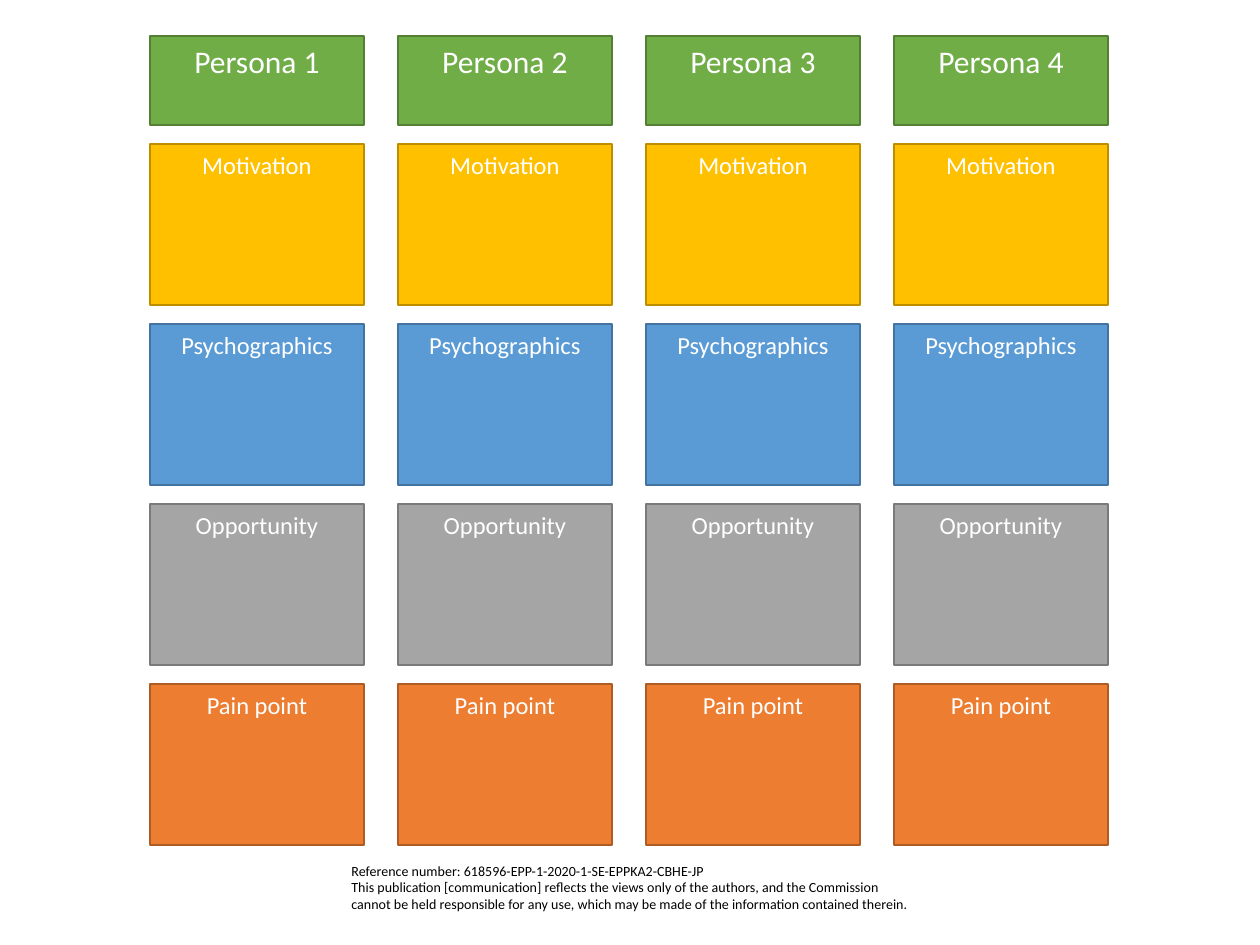
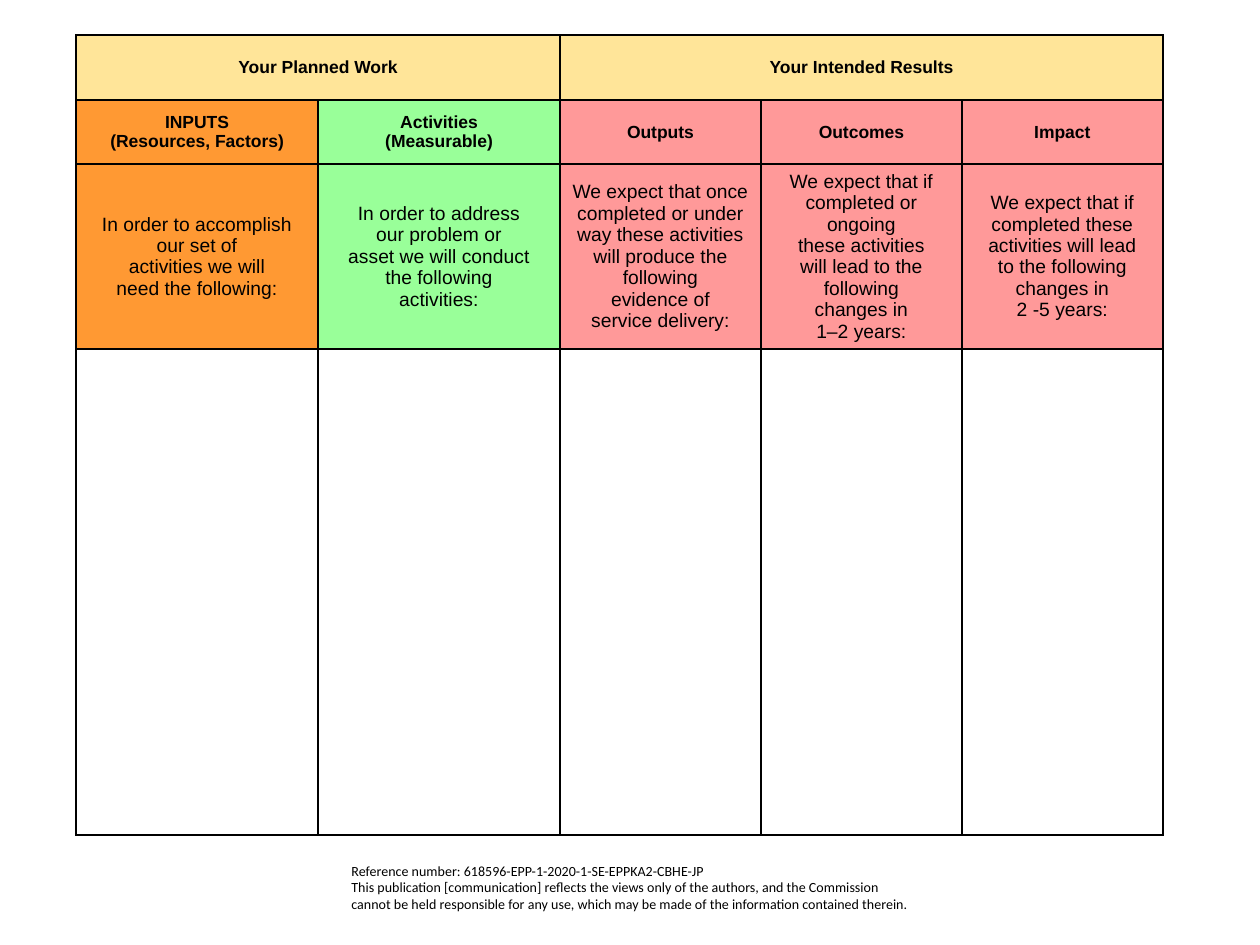
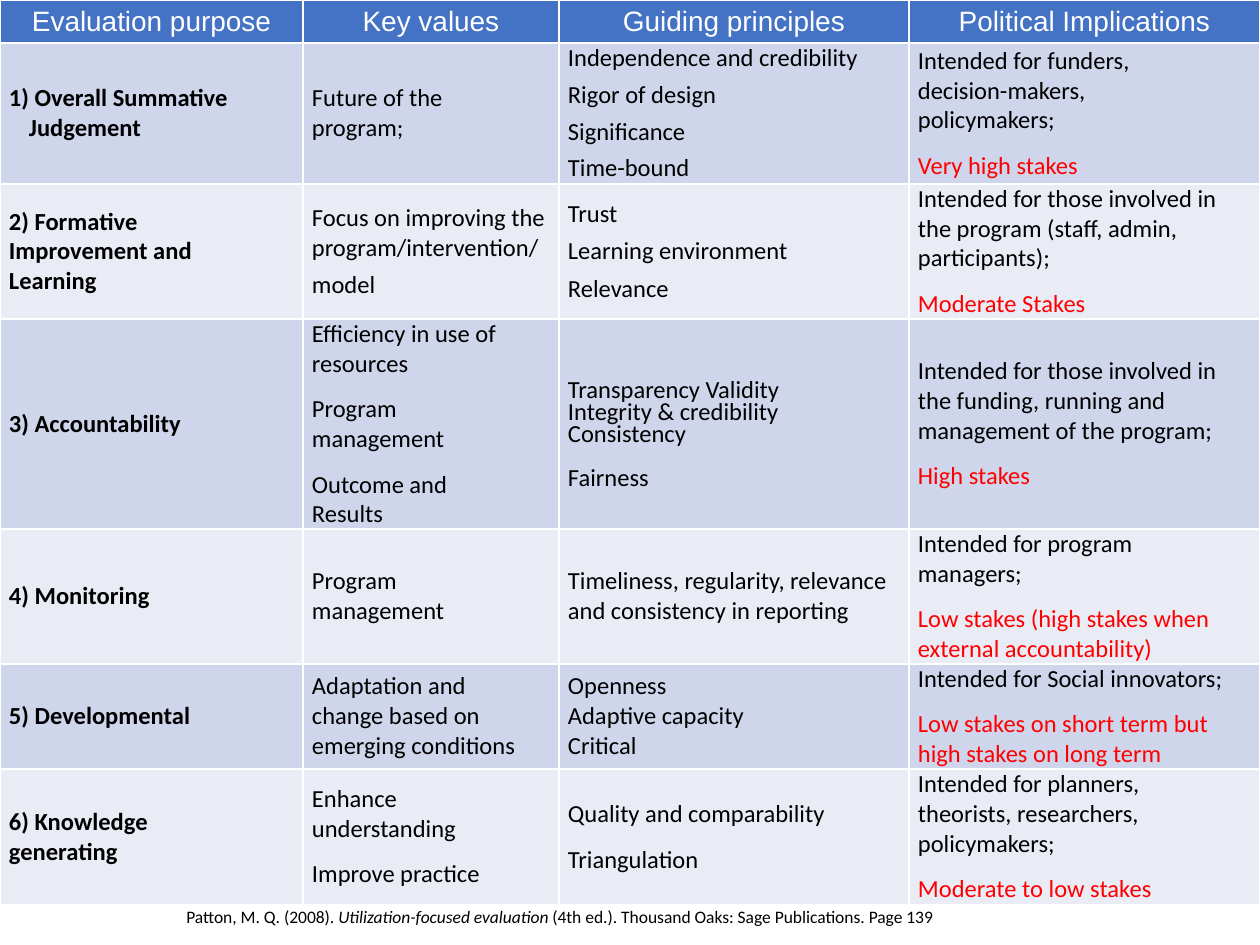
from dataclasses import dataclass

from pptx import Presentation
from pptx.dml.color import RGBColor
from pptx.enum.shapes import MSO_SHAPE as Shape
from pptx.enum.text import MSO_ANCHOR as Anchor, PP_ALIGN as Align
from pptx.oxml import parse_xml
from pptx.oxml.ns import nsdecls
from pptx.util import Emu, Pt

PX_PER_INCH = 126


@dataclass(frozen=True)
class Theme:
    body: str = "Calibri"
    grid: str = "Arial"
    black: str = "000000"
    white: str = "FFFFFF"
    stakes: str = "FF0000"
    header: str = "4472C4"
    bands: tuple = ("CFD5EA", "E9EBF5")
    group: str = "FFE599"
    inputs: str = "FF9933"
    activities: str = "99FF99"
    results: str = "FF9999"
    footer_size: int = 8
    source_size: int = 10
    heading_size: int = 10
    prompt_size: int = 11
    card_size: int = 14
    column_size: int = 16
    persona_size: int = 18


THEME = Theme()

FOOTER = (
    "Reference number: 618596-EPP-1-2020-1-SE-EPPKA2-CBHE-JP\n"
    "This publication [communication] reflects the views only of the authors, and the "
    "Commission cannot be held responsible for any use, which may be made of the "
    "information contained therein."
)
SOURCE = (
    "Patton, M. Q. (2008). *Utilization-focused evaluation* (4th ed.). "
    "Thousand Oaks: Sage Publications. Page 139"
)

# label, fill, outline
PERSONA_CARDS = [
    ("Motivation", "FFC000", "BD8E00"),
    ("Psychographics", "5B9BD5", "43739E"),
    ("Opportunity", "A5A5A5", "7A7A7A"),
    ("Pain point", "ED7D31", "AF5C24"),
]

# heading lines, prompt lines, fill
LOGIC_COLUMNS = [
    (["INPUTS", "(Resources, Factors)"],
     ["In order to accomplish", "our set of", "activities we will", "need the following:"],
     THEME.inputs),
    (["Activities", "(Measurable)"],
     ["In order to address", "our problem or", "asset we will conduct", "the following",
      "activities:"],
     THEME.activities),
    (["Outputs"],
     ["We expect that once", "completed or under", "way these activities",
      "will produce the following", "evidence of", "service delivery:"],
     THEME.results),
    (["Outcomes"],
     ["We expect that if", "completed or ongoing", "these activities",
      "will lead to the following", "changes in", "1–2 years:"],
     THEME.results),
    (["Impact"],
     ["We expect that if", "completed these", "activities will lead", "to the following",
      "changes in", "2 -5 years:"],
     THEME.results),
]


def spaced(text, before=9, line=None):
    return text, dict(before=before, line=line)


def stakes(text):
    return text, dict(before=9, color=THEME.stakes)


PURPOSE_HEADINGS = ["Evaluation purpose", "Key values", "Guiding principles",
                    "Political Implications"]
PURPOSES = [
    [[("1) Overall Summative Judgement", dict(hang=20))],
     ["Future of the program;"],
     ["Independence and credibility"]
     + [spaced(text, 9.2, Pt(11.8)) for text in ("Rigor of design", "Significance", "Time-bound")],
     ["Intended for funders, decision-makers, policymakers;", stakes("Very high stakes")]],
    [["2) Formative Improvement and Learning"],
     ["Focus on improving the program/intervention/", spaced("model", 9, Pt(11.9))],
     ["Trust", spaced("Learning environment", 0, Pt(21.5)), spaced("Relevance", 0, Pt(21.5))],
     ["Intended for those involved in the program (staff, admin, participants);",
      stakes("Moderate Stakes")]],
    [["3) Accountability"],
     ["Efficiency in use of resources", spaced("Program management"),
      spaced("Outcome and Results")],
     [spaced("Transparency Validity", 0, 1.7), spaced("Integrity & credibility", 0, Pt(12.6)),
      spaced("Consistency", 0, Pt(12.6)), spaced("Fairness", 12.6, Pt(12.6))],
     ["Intended for those involved in the funding, running and management of the program;",
      stakes("High stakes")]],
    [["4) Monitoring"],
     ["Program management"],
     ["Timeliness, regularity, relevance and consistency in reporting"],
     ["Intended for program managers;",
      stakes("Low stakes (high stakes when external accountability)")]],
    [["5) Developmental"],
     ["Adaptation and change based on emerging conditions"],
     ["Openness\nAdaptive capacity\nCritical"],
     ["Intended for Social innovators;",
      stakes("Low stakes on short term but high stakes on long term")]],
    [["6) Knowledge generating"],
     ["Enhance understanding", spaced("Improve practice")],
     ["Quality and comparability", spaced("Triangulation")],
     ["Intended for planners, theorists, researchers, policymakers;",
      stakes("Moderate to low stakes")]],
]
# Right margins that set where the purpose columns wrap, with the cells that differ.
WRAP_MARGINS = [60, 36, 0, 35]
WRAP_EXCEPTIONS = {(1, 3): 60, (2, 1): 0}


def px(length):
    return Emu(round(length * 914400 / PX_PER_INCH))


def rgb(value):
    return RGBColor.from_string(value)


def add_spans(para, text, size, font, color, bold):
    """Add runs to para: *stars* mark italics and a newline is a line break."""
    for part_index, part in enumerate(text.split("*")):
        for line_index, piece in enumerate(part.split("\n")):
            if line_index:
                para.add_line_break()
            span = para.add_run()
            span.text = piece
            span.font.size = Pt(size)
            span.font.name = font
            span.font.color.rgb = rgb(color)
            span.font.bold = bold
            span.font.italic = part_index % 2 == 1


def write_text(frame, lines, **style):
    """Write one paragraph per line; a line is a text or a (text, format) pair."""
    frame.word_wrap = True
    for index, line in enumerate(lines):
        text, extra = (line, {}) if isinstance(line, str) else line
        look = dict(size=THEME.card_size, font=THEME.body, color=THEME.black, bold=False,
                    align=Align.LEFT, before=0, line=None, hang=0) | style | extra
        para = frame.add_paragraph() if index else frame.paragraphs[0]
        para.alignment = look.pop("align")
        para.space_before = Pt(look.pop("before"))
        para.line_spacing = look.pop("line")
        hang = px(look.pop("hang"))
        if hang:
            properties = para._p.get_or_add_pPr()
            properties.set("marL", str(hang))
            properties.set("indent", str(-hang))
        add_spans(para, text, **look)


def add_text(page, left, top, width, height, lines, **style):
    box = page.shapes.add_textbox(px(left), px(top), px(width), px(height))
    write_text(box.text_frame, lines, **style)


def add_footer(page):
    add_text(page, 339, 856, 585, 63, [FOOTER], size=THEME.footer_size)


def add_card(page, left, top, width, height, label, fill, outline, size):
    card = page.shapes.add_shape(Shape.RECTANGLE, px(left), px(top), px(width), px(height))
    card.shadow.inherit = False
    card.fill.solid()
    card.fill.fore_color.rgb = rgb(fill)
    card.line.color.rgb = rgb(outline)
    card.line.width = Pt(1)
    card.text_frame.vertical_anchor = Anchor.TOP
    write_text(card.text_frame, [label], size=size, color=THEME.white, align=Align.CENTER)


def add_grid(page, left, top, widths, heights):
    """Add a plain table with the given column widths and row heights."""
    frame = page.shapes.add_table(len(heights), len(widths), px(left), px(top),
                                  px(sum(widths)), px(sum(heights)))
    table = frame.table
    table.first_row = table.horz_banding = False
    for column, width in zip(table.columns, widths):
        column.width = px(width)
    for row, height in zip(table.rows, heights):
        row.height = px(height)
    return table


def fill_cell(cell, lines=(), fill=None, border=THEME.black, left=9, right=9, **style):
    properties = cell._tc.get_or_add_tcPr()
    for side in "LRTB":
        properties.append(parse_xml(
            f'<a:ln{side} {nsdecls("a")} w="12700"><a:solidFill>'
            f'<a:srgbClr val="{border}"/></a:solidFill></a:ln{side}>'))
    if fill:
        cell.fill.solid()
        cell.fill.fore_color.rgb = rgb(fill)
    else:
        cell.fill.background()
    cell.vertical_anchor = Anchor.MIDDLE
    cell.margin_left, cell.margin_right = px(left), px(right)
    cell.margin_top = cell.margin_bottom = 0
    write_text(cell.text_frame, lines, **style)


def build_personas(page):
    add_footer(page)
    for column in range(4):
        left = 150 + 248 * column
        add_card(page, left, 36, 214, 89, f"Persona {column + 1}", "70AD47", "538035",
                 THEME.persona_size)
        for row, (label, fill, outline) in enumerate(PERSONA_CARDS):
            add_card(page, left, 144 + 180 * row, 214, 161, label, fill, outline,
                     THEME.card_size)


def build_logic_model(page):
    add_footer(page)
    table = add_grid(page, 76, 35, [242, 242, 201, 201, 201], [65, 64, 185, 486])
    heading = dict(font=THEME.grid, size=THEME.heading_size, bold=True, align=Align.CENTER)
    prompt = heading | dict(size=THEME.prompt_size, bold=False)
    groups = {0: ("Your Planned Work", 1), 2: ("Your Intended Results", 4)}
    for first, (_, last) in groups.items():
        table.cell(0, first).merge(table.cell(0, last))
    for column, (title, question, fill) in enumerate(LOGIC_COLUMNS):
        group = [groups[column][0]] if column in groups else []
        fill_cell(table.cell(0, column), group, THEME.group, **heading)
        fill_cell(table.cell(1, column), title, fill, **heading)
        fill_cell(table.cell(2, column), question, fill, **prompt)
        fill_cell(table.cell(3, column))


def build_purposes(page):
    table = add_grid(page, 0, 0, [303, 256, 350, 351], [43, 141, 135, 210, 135, 105, 136])
    for column, title in enumerate(PURPOSE_HEADINGS):
        fill_cell(table.cell(0, column), [title], THEME.header, THEME.white, font=THEME.grid,
                  size=THEME.column_size, color=THEME.white, align=Align.CENTER)
    for row, purpose in enumerate(PURPOSES, start=1):
        for column, lines in enumerate(purpose):
            fill_cell(table.cell(row, column), lines, THEME.bands[(row - 1) % 2], THEME.white,
                      right=WRAP_EXCEPTIONS.get((row, column), WRAP_MARGINS[column]),
                      bold=column == 0)
    add_text(page, 174, 900, 883, 72, [SOURCE], size=THEME.source_size)


def main():
    deck = Presentation()
    deck.slide_width, deck.slide_height = px(1260), px(945)
    blank = deck.slide_layouts[6]
    for build in (build_personas, build_logic_model, build_purposes):
        build(deck.slides.add_slide(blank))
    deck.save("out.pptx")


if __name__ == "__main__":
    main()
